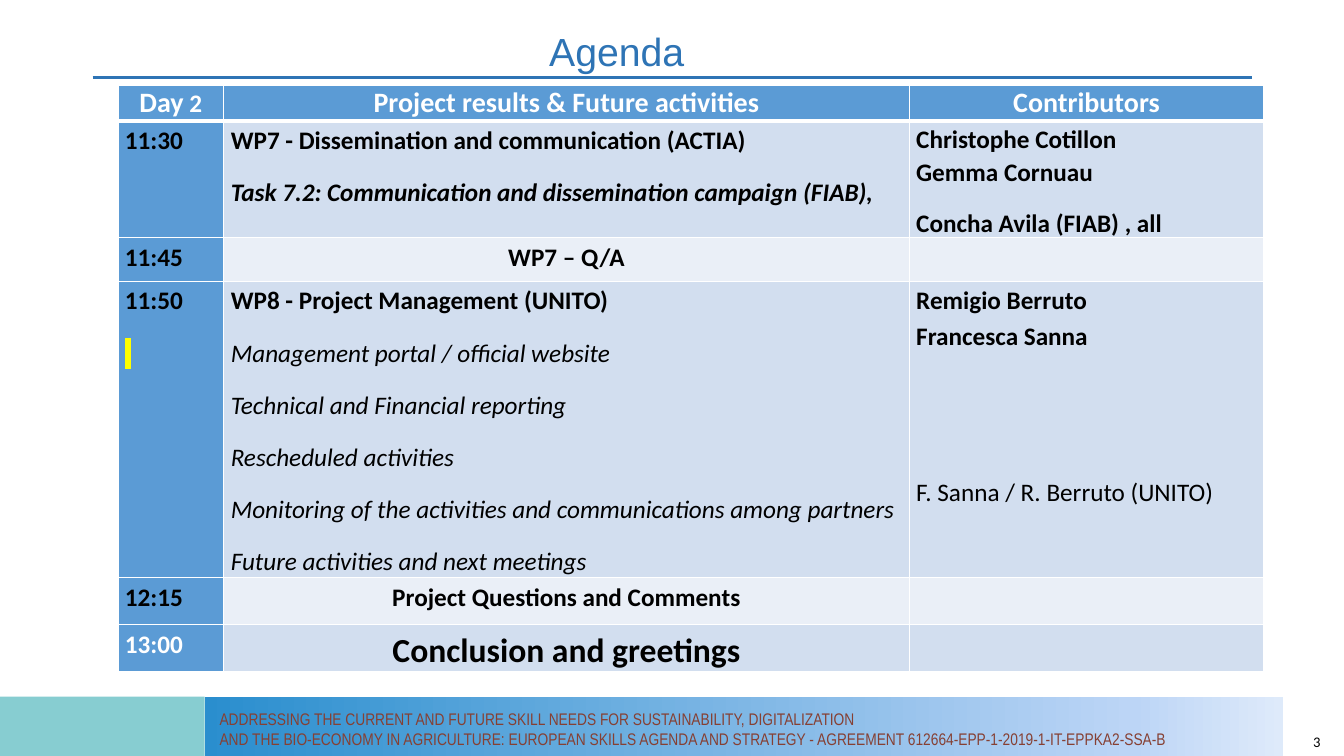
import copy
from dataclasses import dataclass

import pptx
import pptx.dml.color
import pptx.enum.shapes
import pptx.enum.text
import pptx.oxml
import pptx.oxml.ns
import pptx.util

qn = pptx.oxml.ns.qn
ALIGN = pptx.enum.text.PP_ALIGN
ANCHOR = pptx.enum.text.MSO_ANCHOR
SLIDE_WIDTH = pptx.util.Inches(13.33)
SLIDE_HEIGHT = pptx.util.Inches(7.5)
GRID_COLUMNS, GRID_ROWS = 160, 90


@dataclass(frozen=True)
class Theme:
    heading: str = "2E74B5"
    teal: str = "87CDD1"
    band: tuple = ((0, "2A8ECE"), (0.86, "BCD5F6"), (1, "DEEAFA"))
    footer: str = "864033"
    accent: str = "5B9BD5"
    odd_row: str = "D2DEEF"
    even_row: str = "EAEFF7"
    black: str = "000000"
    white: str = "FFFFFF"
    marker: str = "FFFF00"
    title_font: str = "Arial"
    footer_font: str = "Arial Narrow"
    body_font: str = "Calibri"
    title_size: float = 28
    closing_size: float = 24
    header_size: float = 20
    body_size: float = 18
    footer_size: float = 12
    number_size: float = 10.5
    spacing: float = 6


THEME = Theme()


@dataclass(frozen=True)
class Area:
    column: float
    row: float
    columns: float
    rows: float

    def box(self) -> tuple:
        return across(self.column), down(self.row), across(self.columns), down(self.rows)


@dataclass(frozen=True)
class Style:
    size: float = THEME.body_size
    color: str = THEME.black
    font: str = THEME.body_font
    bold: bool = False
    italic: bool = False
    highlight: str = ""


@dataclass(frozen=True)
class Line:
    text: str
    style: Style = Style(bold=True)
    align: ALIGN = ALIGN.LEFT
    before: float = THEME.spacing
    leading: float = 1.15
    hanging: bool = False
    suffix: str = ""


@dataclass(frozen=True)
class Session:
    rows: float
    cells: tuple


def across(columns: float) -> int:
    return round(SLIDE_WIDTH * columns / GRID_COLUMNS)


def down(rows: float) -> int:
    return round(SLIDE_HEIGHT * rows / GRID_ROWS)


def rgb(color: str) -> pptx.dml.color.RGBColor:
    return pptx.dml.color.RGBColor.from_string(color)


def format_run(run, style: Style) -> None:
    font = run.font
    font.size = pptx.util.Pt(style.size)
    font.name, font.bold, font.italic = style.font, style.bold, style.italic
    font.color.rgb = rgb(style.color)
    if style.highlight:
        mark = pptx.oxml.parse_xml(
            f'<a:highlight {pptx.oxml.ns.nsdecls("a")}><a:srgbClr val="{style.highlight}"/></a:highlight>')
        run._r.rPr.find(qn("a:solidFill")).addnext(mark)


def write_text(paragraph, text: str, style: Style) -> None:
    paragraph.text = text
    for run in paragraph.runs:
        format_run(run, style)
    for line_break in paragraph._p.findall(qn("a:br")):
        line_break.append(copy.deepcopy(paragraph.runs[0]._r.rPr))


def add_label(slide, area: Area, text: str, style: Style, align=ALIGN.LEFT,
              anchor=ANCHOR.TOP, leading: float = 1.0) -> None:
    frame = slide.shapes.add_textbox(*area.box()).text_frame
    frame.word_wrap, frame.vertical_anchor = True, anchor
    paragraph = frame.paragraphs[0]
    write_text(paragraph, text, style)
    paragraph.alignment, paragraph.line_spacing = align, leading


def add_block(slide, area: Area):
    block = slide.shapes.add_shape(pptx.enum.shapes.MSO_SHAPE.RECTANGLE, *area.box())
    block.shadow.inherit = False
    block.line.fill.background()
    return block


def add_footer(slide) -> None:
    teal = add_block(slide, Area(0, 82.92, 24.36, 7.08))
    teal.fill.solid()
    teal.fill.fore_color.rgb = rgb(THEME.teal)
    band = add_block(slide, Area(24.36, 82.92, 128.4, 7.08))
    band.fill.gradient()
    band.fill.gradient_angle = 0
    stop_list = next(band._element.iter(qn("a:gsLst")))
    stop_list.append(copy.deepcopy(stop_list[-1]))
    for stop, (position, color) in zip(band.fill.gradient_stops, THEME.band):
        stop.position, stop.color.rgb = position, rgb(color)
    add_label(slide, Area(24.96, 83.76, 127.8, 6),
              "ADDRESSING THE CURRENT AND FUTURE SKILL NEEDS FOR SUSTAINABILITY, DIGITALIZATION\n"
              "AND THE BIO-ECONOMY IN AGRICULTURE: EUROPEAN SKILLS AGENDA AND STRATEGY - "
              "AGREEMENT 612664-EPP-1-2019-1-IT-EPPKA2-SSA-B",
              Style(THEME.footer_size, THEME.footer, THEME.footer_font))


def add_rule(slide) -> None:
    rule = slide.shapes.add_connector(pptx.enum.shapes.MSO_CONNECTOR.STRAIGHT,
                                      across(11.04), down(9.24), across(149.04), down(9.24))
    rule.line.color.rgb, rule.line.width = rgb(THEME.heading), pptx.util.Pt(2.25)
    rule._element.spPr.append(pptx.oxml.parse_xml(f'<a:effectLst {pptx.oxml.ns.nsdecls("a")}/>'))


def set_borders(cell, row: int) -> None:
    widths = {"L": 1, "R": 1, "T": 3 if row == 1 else 1, "B": 3 if row == 0 else 1}
    for side, width in widths.items():
        cell._tc.get_or_add_tcPr().append(pptx.oxml.parse_xml(
            f'<a:ln{side} {pptx.oxml.ns.nsdecls("a")} w="{pptx.util.Pt(width)}">'
            f'<a:solidFill><a:srgbClr val="{THEME.white}"/></a:solidFill></a:ln{side}>'))


def fill_cell(cell, lines: tuple, row: int, column: int) -> None:
    set_borders(cell, row)
    cell.fill.solid()
    stripe = THEME.odd_row if row % 2 else THEME.even_row
    cell.fill.fore_color.rgb = rgb(THEME.accent if row == 0 or column == 0 else stripe)
    if not lines:
        return
    cell.margin_top = cell.margin_bottom = 0
    cell.margin_left = cell.margin_right = pptx.util.Inches(0.07 if row else 0.03)
    cell.vertical_anchor = ANCHOR.TOP if row else ANCHOR.MIDDLE
    cell.text_frame.text = "\n".join("" for _ in lines)
    for index, (paragraph, line) in enumerate(zip(cell.text_frame.paragraphs, lines)):
        write_text(paragraph, line.text, line.style)
        if line.suffix:
            suffix = paragraph.add_run()
            suffix.text = line.suffix
            format_run(suffix, Style(color=line.style.color, bold=True))
        paragraph.alignment, paragraph.line_spacing = line.align, line.leading
        paragraph.space_before = pptx.util.Pt(line.before if index else 0)
        paragraph.space_after = pptx.util.Pt(THEME.spacing)
        if line.hanging:
            indent = pptx.util.Inches(0.58)
            properties = paragraph._p.get_or_add_pPr()
            properties.set("marL", str(indent))
            properties.set("indent", str(-indent))


def header(text: str, suffix: str = "") -> tuple:
    style = Style(THEME.header_size, THEME.white, bold=True)
    return (Line(text, style, ALIGN.CENTER, leading=1.0, suffix=suffix),)


def topic(text: str, align=ALIGN.LEFT, **style) -> Line:
    return Line(text, Style(**style), align, hanging=True)


def centred(text: str, size: float = THEME.body_size) -> tuple:
    return (topic(text, ALIGN.CENTER, bold=True, size=size),)


MANAGEMENT_TOPICS = (
    "Management portal / official website",
    "Technical and Financial reporting",
    "Rescheduled activities",
    "Monitoring of the activities and communications among partners",
    "Future activities and next meetings",
)
AGENDA = (
    Session(4.2, (header("Day", " 2"), header("Project results & Future activities"), header("Contributors"))),
    Session(13.92, (
        (Line("11:30"),),
        (topic("WP7 - Dissemination and communication (ACTIA)", bold=True),
         topic("Task 7.2: Communication and dissemination campaign (FIAB),", bold=True, italic=True)),
        (Line("Christophe Cotillon\nGemma Cornuau", leading=1.1),
         Line("Concha Avila (FIAB) , all", leading=1.1)))),
    Session(5.16, ((Line("11:45"),), centred("WP7 – Q/A"), ())),
    Session(35.28, (
        (Line("11:50"), Line(" ", Style(bold=True, highlight=THEME.marker))),
        (topic("WP8 - Project Management (UNITO)", bold=True),
         *(topic(text, italic=True) for text in MANAGEMENT_TOPICS)),
        (Line("Remigio Berruto\nFrancesca Sanna"),
         Line("F. Sanna / R. Berruto (UNITO)", Style(), before=80.5)))),
    Session(5.64, ((Line("12:15"),), centred("Project Questions and Comments"), ())),
    Session(5.52, ((Line("13:00", Style(color=THEME.white, bold=True)),),
                   centred("Conclusion and greetings", THEME.closing_size), ())),
)
AGENDA_COLUMNS = (12.6, 81.6, 42.24)


def add_agenda(slide) -> None:
    area = Area(14.04, 10.2, sum(AGENDA_COLUMNS), sum(session.rows for session in AGENDA))
    agenda = slide.shapes.add_table(len(AGENDA), len(AGENDA_COLUMNS), *area.box()).table
    agenda.first_row = agenda.horz_banding = False
    for column, width in zip(agenda.columns, AGENDA_COLUMNS):
        column.width = across(width)
    for row, session in enumerate(AGENDA):
        agenda.rows[row].height = down(session.rows)
        for column, lines in enumerate(session.cells):
            fill_cell(agenda.cell(row, column), lines, row, column)


def main() -> None:
    deck = pptx.Presentation()
    deck.slide_width, deck.slide_height = SLIDE_WIDTH, SLIDE_HEIGHT
    slide = deck.slides.add_slide(deck.slide_layouts[6])
    add_rule(slide)
    add_footer(slide)
    add_label(slide, Area(64.2, 3.24, 67.56, 7.08), "Agenda",
              Style(THEME.title_size, THEME.heading, THEME.title_font), leading=0.9)
    add_label(slide, Area(122.4, 86.76, 36, 3), "3", Style(THEME.number_size), ALIGN.RIGHT, ANCHOR.MIDDLE)
    add_agenda(slide)
    deck.save("out.pptx")


if __name__ == "__main__":
    main()
